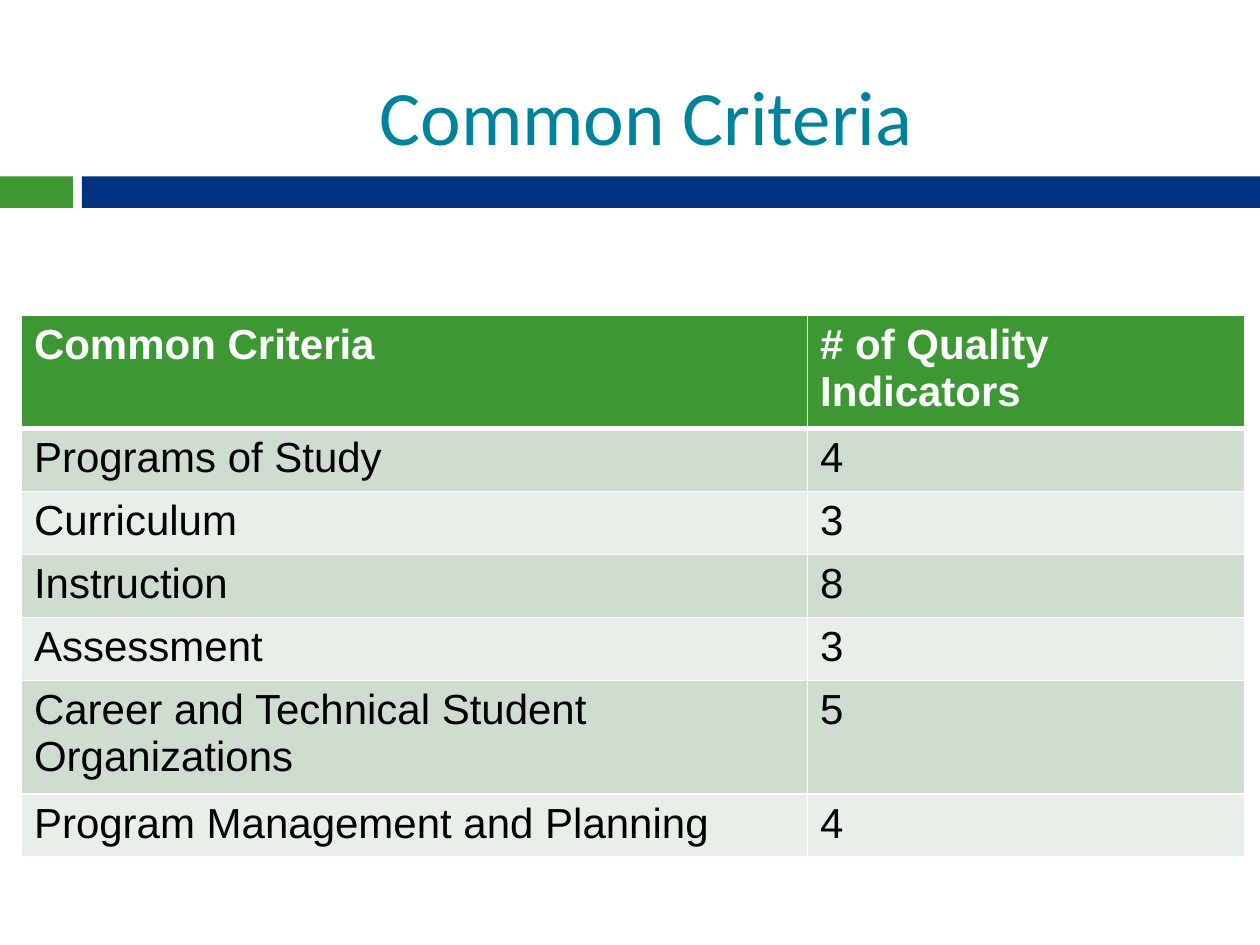
from dataclasses import dataclass

from lxml.etree import SubElement
from pptx import Presentation
from pptx.dml.color import RGBColor
from pptx.enum.shapes import MSO_SHAPE
from pptx.enum.text import MSO_ANCHOR, PP_ALIGN
from pptx.oxml.ns import qn
from pptx.slide import Slide
from pptx.table import _Cell
from pptx.util import Inches, Pt


@dataclass(frozen=True)
class Theme:
    green: str = "3D9833"
    navy: str = "00337F"
    teal: str = "00829B"
    white: str = "FFFFFF"
    black: str = "000000"
    bands: tuple[str, str] = ("CEDDCE", "E8EFE8")
    title_font: str = "Calibri"
    table_font: str = "Arial"
    title_size: int = 44
    table_size: int = 24
    border: int = 1
    header_border: int = 3


@dataclass(frozen=True)
class Bar:
    left: float
    width: float
    color: str


@dataclass(frozen=True)
class Criterion:
    name: str
    indicators: str


THEME = Theme()
BARS = (Bar(0, 0.58, THEME.green), Bar(0.65, 9.35, THEME.navy))
HEADER = Criterion("Common Criteria", "# of Quality Indicators")
CRITERIA = (
    Criterion("Programs of Study", "4"),
    Criterion("Curriculum", "3"),
    Criterion("Instruction", "8"),
    Criterion("Assessment", "3"),
    Criterion("Career and Technical Student Organizations", "5"),
    Criterion("Program Management and Planning", "4"),
)
COLUMN_WIDTHS = (6.24, 3.47)
ROW_HEIGHT = 0.41


def draw_bar(slide: Slide, bar: Bar) -> None:
    shape = slide.shapes.add_shape(
        MSO_SHAPE.RECTANGLE, Inches(bar.left), Inches(1.4), Inches(bar.width), Inches(0.25)
    )
    shape.shadow.inherit = False
    shape.fill.solid()
    shape.fill.fore_color.rgb = RGBColor.from_string(bar.color)
    shape.line.fill.background()


def draw_title(slide: Slide, text: str) -> None:
    box = slide.shapes.add_textbox(Inches(0.67), Inches(0.25), Inches(8.92), Inches(1.08))
    frame = box.text_frame
    frame.word_wrap = True
    frame.vertical_anchor = MSO_ANCHOR.BOTTOM
    paragraph = frame.paragraphs[0]
    paragraph.text = text
    paragraph.alignment = PP_ALIGN.CENTER
    paragraph.font.name = THEME.title_font
    paragraph.font.size = Pt(THEME.title_size)
    paragraph.font.color.rgb = RGBColor.from_string(THEME.teal)


def add_borders(cell: _Cell, top: int, bottom: int) -> None:
    properties = cell._tc.get_or_add_tcPr()
    widths = {"a:lnL": THEME.border, "a:lnR": THEME.border, "a:lnT": top, "a:lnB": bottom}
    for tag, width in widths.items():
        line = SubElement(properties, qn(tag), w=str(Pt(width)))
        fill = SubElement(line, qn("a:solidFill"))
        SubElement(fill, qn("a:srgbClr"), val=THEME.white)


def draw_cell(cell: _Cell, text: str, row: int) -> None:
    is_header = row == 0
    add_borders(
        cell,
        top=THEME.header_border if row == 1 else THEME.border,
        bottom=THEME.header_border if is_header else THEME.border,
    )
    cell.fill.solid()
    color = THEME.green if is_header else THEME.bands[(row - 1) % 2]
    cell.fill.fore_color.rgb = RGBColor.from_string(color)
    paragraph = cell.text_frame.paragraphs[0]
    paragraph.text = text
    font = paragraph.font
    font.name = THEME.table_font
    font.size = Pt(THEME.table_size)
    font.bold = is_header
    font.color.rgb = RGBColor.from_string(THEME.white if is_header else THEME.black)


def draw_criteria_table(slide: Slide) -> None:
    entries = (HEADER, *CRITERIA)
    table = slide.shapes.add_table(
        len(entries), len(COLUMN_WIDTHS), Inches(0.17), Inches(2.5),
        Inches(sum(COLUMN_WIDTHS)), Inches(ROW_HEIGHT * len(entries)),
    ).table
    for column, width in zip(table.columns, COLUMN_WIDTHS):
        column.width = Inches(width)
    for row, entry in enumerate(entries):
        table.rows[row].height = Inches(ROW_HEIGHT)
        for column, text in enumerate((entry.name, entry.indicators)):
            draw_cell(table.cell(row, column), text, row)


def main() -> None:
    presentation = Presentation()
    presentation.slide_width = Inches(10)
    presentation.slide_height = Inches(7.5)
    slide = presentation.slides.add_slide(presentation.slide_layouts[6])
    for bar in BARS:
        draw_bar(slide, bar)
    draw_title(slide, "Common Criteria")
    draw_criteria_table(slide)
    presentation.save("out.pptx")


if __name__ == "__main__":
    main()
